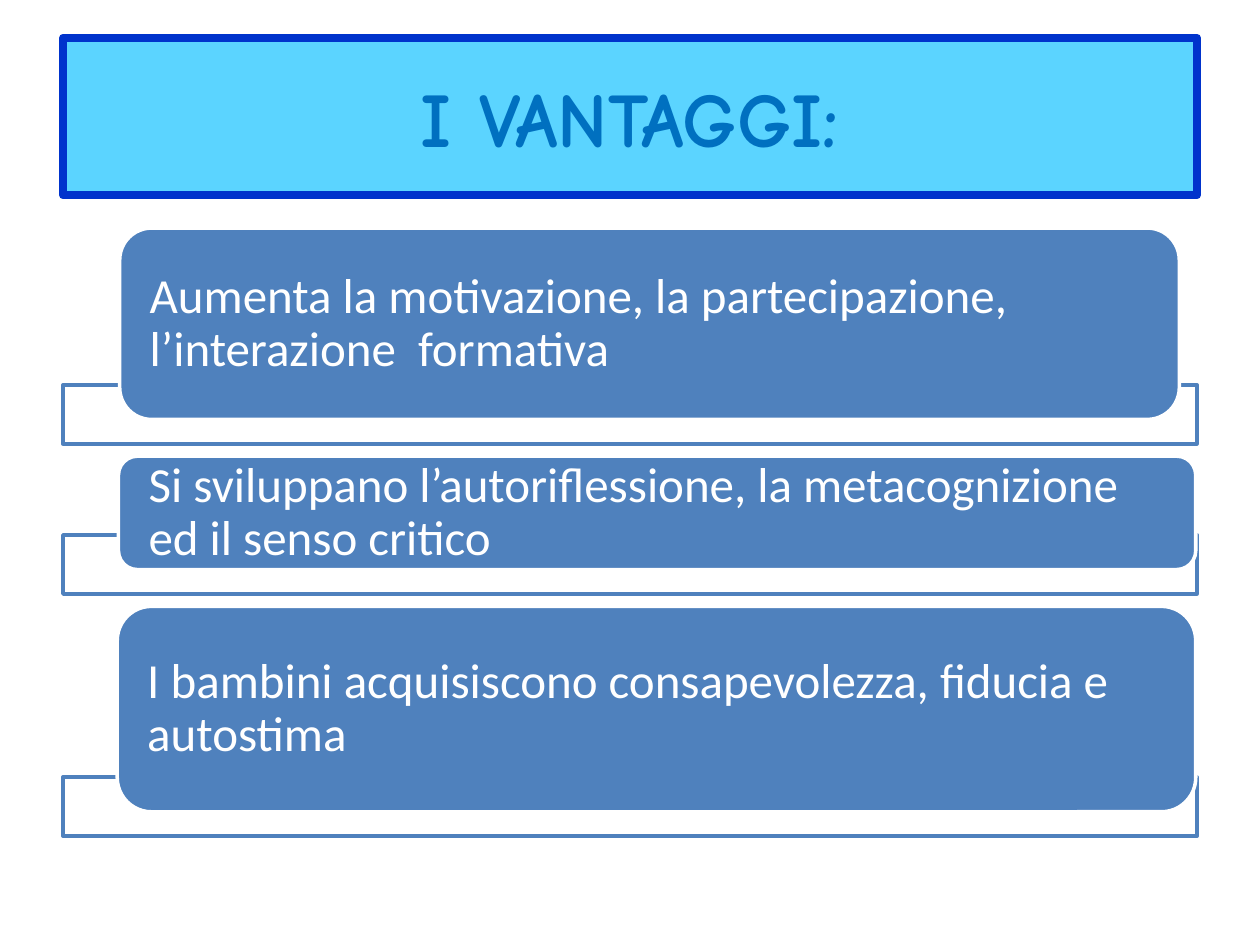
from dataclasses import dataclass

from lxml.etree import SubElement
from pptx import Presentation
from pptx.dml.color import RGBColor
from pptx.enum.shapes import MSO_SHAPE
from pptx.enum.text import MSO_ANCHOR, PP_ALIGN
from pptx.oxml.ns import qn
from pptx.shapes.autoshape import Shape
from pptx.slide import Slide
from pptx.util import Pt


@dataclass(frozen=True)
class Theme:
    white: str = "FFFFFF"
    blue: str = "4F81BD"
    sky: str = "5BD4FF"
    navy: str = "0033CC"
    title_text: str = "0070C0"
    title_font: str = "Comic Neue"
    body_font: str = "Calibri"
    title_size: float = 44
    body_size: float = 28
    title_line: float = 4.5
    body_line: float = 2


@dataclass(frozen=True)
class Benefit:
    text: str
    left: float
    width: float
    height: float


THEME = Theme()
LEFT, WIDTH = 36, 648
FIRST_TOP = 130.3
STRIP_HEIGHT = 33.8
OVERLAP = 19.8
GAP = 7
TEXT_INSET = 17.3
CORNER_INSET = 0.05

BENEFITS = [
    Benefit("Aumenta la motivazione, la partecipazione, l’interazione  formativa",
            68.4, 605.5, 109.4),
    Benefit("Si sviluppano l’autoriflessione, la metacognizione ed il senso critico",
            67.7, 615.6, 64.8),
    Benefit("I bambini acquisiscono consapevolezza, fiducia e autostima",
            67, 616.3, 117.4),
]


def add_box(s: Slide, kind: MSO_SHAPE, left: float, top: float, width: float,
            height: float, fill: str, line: str, weight: float) -> Shape:
    sp = s.shapes.add_shape(kind, Pt(left), Pt(top), Pt(width), Pt(height))
    sp.shadow.inherit = False
    sp.fill.solid()
    sp.fill.fore_color.rgb = RGBColor.from_string(fill)
    sp.line.color.rgb = RGBColor.from_string(line)
    sp.line.width = Pt(weight)
    return sp


def set_text(sp: Shape, text: str, *, font: str, size: float, color: str,
             bold: bool = False, align: PP_ALIGN = PP_ALIGN.LEFT,
             spacing: float = 1.0, inset: float = 7.2, pad: float = 0) -> None:
    tf = sp.text_frame
    tf.word_wrap = True
    tf.vertical_anchor = MSO_ANCHOR.MIDDLE
    tf.margin_left = tf.margin_right = Pt(inset)
    tf.margin_top = tf.margin_bottom = Pt(pad)
    p = tf.paragraphs[0]
    p.alignment = align
    p.line_spacing = spacing
    r = p.add_run()
    r.text = text
    r.font.name = font
    r.font.size = Pt(size)
    r.font.bold = bold
    r.font.color.rgb = RGBColor.from_string(color)


def set_opacity(sp: Shape, percent: int) -> None:
    color = sp.fill._xPr.find(qn("a:solidFill"))[0]
    SubElement(color, qn("a:alpha"), val=str(percent * 1000))


def add_title(s: Slide, text: str) -> None:
    sp = add_box(s, MSO_SHAPE.RECTANGLE, LEFT, 21.6, WIDTH, 90,
                 THEME.sky, THEME.navy, THEME.title_line)
    set_text(sp, text, font=THEME.title_font, size=THEME.title_size,
             color=THEME.title_text, bold=True, align=PP_ALIGN.CENTER, pad=3.6)


def add_benefit(s: Slide, item: Benefit, top: float) -> float:
    strip_top = top + item.height - OVERLAP
    strip = add_box(s, MSO_SHAPE.RECTANGLE, LEFT, strip_top, WIDTH, STRIP_HEIGHT,
                    THEME.white, THEME.blue, THEME.body_line)
    set_opacity(strip, 90)
    bar = add_box(s, MSO_SHAPE.ROUNDED_RECTANGLE, item.left, top, item.width,
                  item.height, THEME.blue, THEME.white, THEME.body_line)
    set_text(bar, item.text, font=THEME.body_font, size=THEME.body_size,
             color=THEME.white, spacing=0.9,
             inset=TEXT_INSET - CORNER_INSET * item.height)
    return strip_top + STRIP_HEIGHT + GAP


def main() -> None:
    prs = Presentation()
    prs.slide_width, prs.slide_height = Pt(720), Pt(540)
    s = prs.slides.add_slide(prs.slide_layouts[6])
    add_title(s, "I VANTAGGI:")
    top = FIRST_TOP
    for item in BENEFITS:
        top = add_benefit(s, item, top)
    prs.save("out.pptx")


if __name__ == "__main__":
    main()
